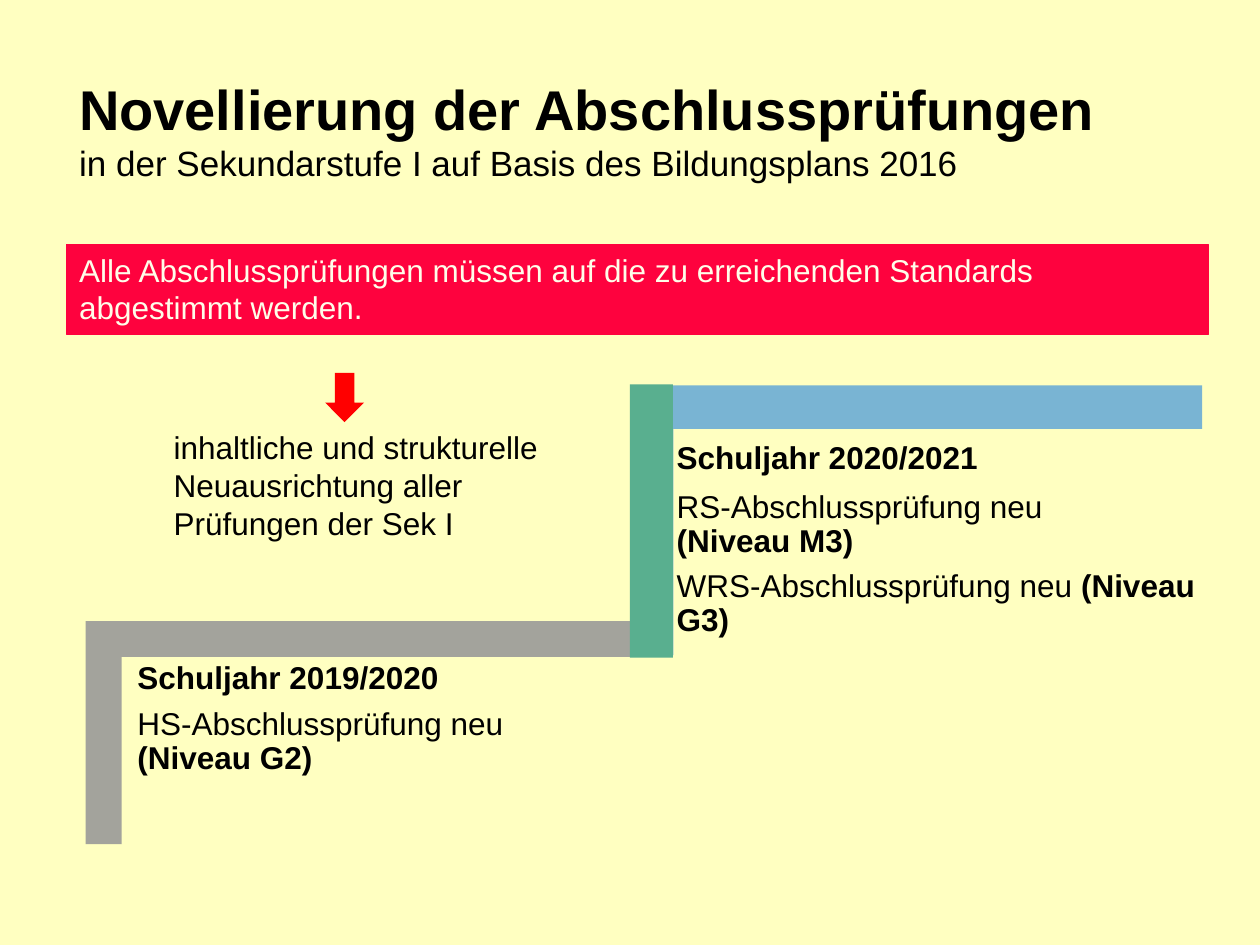
from dataclasses import dataclass
from typing import Any, Optional

from lxml import etree
from pptx import Presentation
from pptx.dml import color
from pptx.enum import shapes, text
from pptx.oxml import ns
from pptx.util import Inches, Pt

COLORS = {
    "page": "FFFFC1", "ink": "000000", "banner": "FE023E", "banner_text": "FFFDE9",
    "step_low": "999999", "step_high": "79B4D3", "riser": "59AF8F", "arrow": "FF0000",
}
KIND = shapes.MSO_AUTO_SHAPE_TYPE
CORNER = KIND.from_xml("corner")
GROW = text.MSO_AUTO_SIZE.SHAPE_TO_FIT_TEXT
TIGHT = {"line_spacing": 0.9, "space_after": Pt(6.3)}


@dataclass
class Area:
    """Left, top, width and height in inches."""
    left: float
    top: float
    width: float
    height: float

    def lengths(self) -> list:
        """Return the four sides as lengths."""
        return [Inches(side) for side in (self.left, self.top, self.width, self.height)]


@dataclass
class Span:
    """Text of one format; a trailing newline is a line break."""
    words: str
    bold: bool = False
    size: float = 18


@dataclass
class Para:
    """Spans with the format of their paragraph."""
    spans: list[Span]
    form: dict[str, Any]


@dataclass
class Block:
    """A filled shape."""
    kind: Any
    area: Area
    color: str
    rotation: float = 0
    adjustments: tuple[float, ...] = ()
    opacity: Optional[int] = None


def apply(target: Any, values: dict[str, Any]) -> None:
    """Set each value as an attribute of the target."""
    for name, value in values.items():
        setattr(target, name, value)


def rgb(name: str) -> color.RGBColor:
    """Look up a named colour."""
    return color.RGBColor.from_string(COLORS[name])


def write(box: Any, paras: list[Para], ink: str = "ink", inset: Optional[float] = None,
          **frame_form: Any) -> None:
    """Fill a box with formatted paragraphs."""
    frame = box.text_frame
    if inset is not None:
        sides = ("margin_left", "margin_top", "margin_right", "margin_bottom")
        frame_form |= dict.fromkeys(sides, Inches(inset))
    apply(frame, {"word_wrap": True, "vertical_anchor": text.MSO_ANCHOR.TOP} | frame_form)
    for index, para in enumerate(paras):
        paragraph = frame.add_paragraph() if index else frame.paragraphs[0]
        apply(paragraph, {"alignment": text.PP_ALIGN.LEFT} | para.form)
        for span in para.spans:
            run = paragraph.add_run()
            run.text = span.words.rstrip("\n")
            apply(run.font, {"name": "Arial", "size": Pt(span.size), "bold": span.bold})
            run.font.color.rgb = rgb(ink)
            if span.words.endswith("\n"):
                paragraph.add_line_break()


def add_text(page: Any, area: Area, paras: list[Para], **form: Any) -> None:
    """Add a text box."""
    write(page.shapes.add_textbox(*area.lengths()), paras, **form)


def add_block(page: Any, block: Block) -> Any:
    """Add a filled shape without outline or shadow."""
    shape = page.shapes.add_shape(block.kind, *block.area.lengths())
    shape.shadow.inherit = False
    shape.rotation = block.rotation
    shape.fill.solid()
    shape.fill.fore_color.rgb = rgb(block.color)
    shape.line.fill.background()
    for index, value in enumerate(block.adjustments):
        shape.adjustments[index] = value
    if block.opacity is not None:
        tone = shape.element.spPr.find(".//" + ns.qn("a:srgbClr"))
        etree.SubElement(tone, ns.qn("a:alpha"), val=str(block.opacity * 1000))
    return shape


def add_step(page: Any, area: Area, name: str, opacity: Optional[int] = None) -> None:
    """Add an angled stair step that covers the area after a quarter turn."""
    shift = (area.width - area.height) / 2
    turned = Area(area.left + shift, area.top - shift, area.height, area.width)
    add_block(page, Block(CORNER, turned, name, 90, (0.161, 0.161), opacity))


def main() -> None:
    """Build and save the deck."""
    deck = Presentation()
    apply(deck, {"slide_width": Inches(10), "slide_height": Inches(7.5)})
    page = deck.slides.add_slide(deck.slide_layouts[6])
    page.background.fill.solid()
    page.background.fill.fore_color.rgb = rgb("page")

    add_text(page, Area(0.53, 0.44, 9.37, 1.17), [Para([
        Span("Novellierung der Abschlussprüfungen \n", True, 32),
        Span("in der Sekundarstufe I auf Basis des Bildungsplans 2016", size=20),
    ], {})], vertical_anchor=text.MSO_ANCHOR.MIDDLE)

    banner = add_block(page, Block(KIND.RECTANGLE, Area(0.53, 1.94, 9.06, 0.71), "banner"))
    banner.line.color.rgb = rgb("banner")
    banner.line.width = Pt(0.25)
    write(banner, [
        Para([Span("Alle Abschlussprüfungen müssen auf die zu erreichenden Standards")], {}),
        Para([Span("abgestimmt werden.")], {}),
    ], ink="banner_text", auto_size=GROW)

    add_step(page, Area(0.68, 4.93, 4.66, 1.77), "step_low", 90)
    add_text(page, Area(1.02, 5.19, 4.39, 1.87), [
        Para([Span("Schuljahr 2019/2020", True)], TIGHT),
        Para([Span("HS-Abschlussprüfung neu \n"), Span("(Niveau G2)", True)], TIGHT),
    ], inset=0.07)

    add_step(page, Area(5, 3.06, 4.54, 2.14), "step_high")
    add_text(page, Area(5.3, 3.44, 4.31, 2.38), [
        Para([Span("Schuljahr 2020/2021", True)], TIGHT),
        Para([Span("RS-Abschlussprüfung neu")], {}),
        Para([Span("(Niveau M3)", True)], TIGHT),
        Para([Span("WRS-Abschlussprüfung neu "), Span("(Niveau G3)", True)], TIGHT),
    ], inset=0.07)

    add_text(page, Area(1.28, 3.35, 3.54, 1.32), [
        Para([Span("inhaltliche und strukturelle")], {}),
        Para([Span("Neuausrichtung aller Prüfungen der Sek I")], {}),
    ], auto_size=GROW)

    add_block(page, Block(KIND.DOWN_ARROW, Area(2.58, 2.96, 0.31, 0.39), "arrow"))
    add_block(page, Block(KIND.RECTANGLE, Area(5, 3.05, 0.34, 2.17), "riser"))
    deck.save("out.pptx")


if __name__ == "__main__":
    main()
